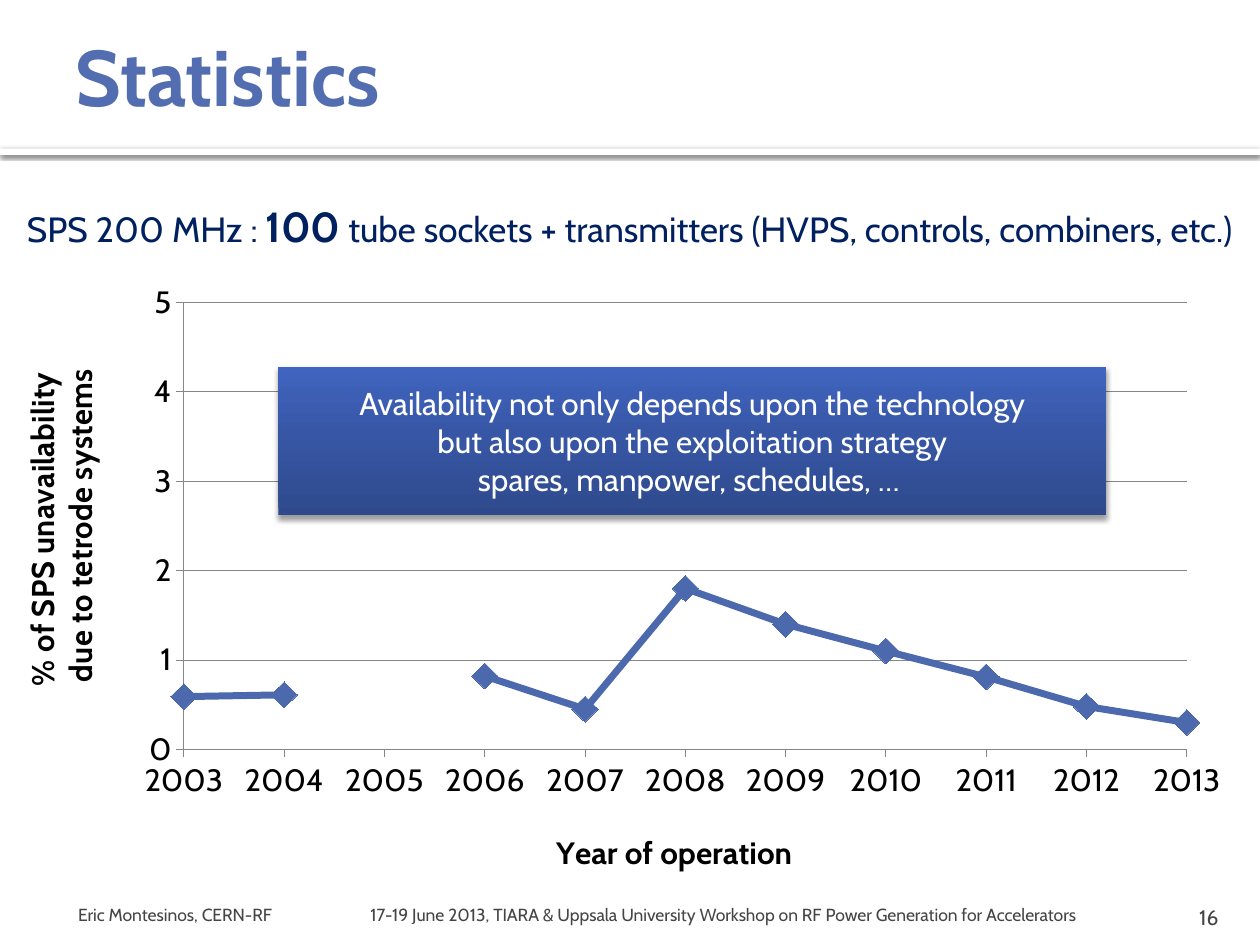
from copy import deepcopy
from dataclasses import dataclass

from lxml import etree
from pptx import Presentation
from pptx.chart.data import XyChartData
from pptx.dml.color import RGBColor
from pptx.enum.chart import XL_CHART_TYPE, XL_MARKER_STYLE, XL_TICK_MARK
from pptx.enum.shapes import MSO_SHAPE
from pptx.enum.text import MSO_ANCHOR, PP_ALIGN
from pptx.oxml.ns import qn
from pptx.util import Inches, Pt

LEFT, CENTER, RIGHT = PP_ALIGN.LEFT, PP_ALIGN.CENTER, PP_ALIGN.RIGHT
TOP, MIDDLE, BOTTOM = MSO_ANCHOR.TOP, MSO_ANCHOR.MIDDLE, MSO_ANCHOR.BOTTOM
RECT = MSO_SHAPE.RECTANGLE
SCATTER_LINES = XL_CHART_TYPE.XY_SCATTER_LINES
DIAMOND = XL_MARKER_STYLE.DIAMOND
TICK_OUT, TICK_NONE = XL_TICK_MARK.OUTSIDE, XL_TICK_MARK.NONE


@dataclass(frozen=True)
class Theme:
    font: str = "Cabin"
    title: str = "526DB0"
    navy: str = "002060"
    series: str = "4D69AE"
    grid: str = "868686"
    footer: str = "454545"
    black: str = "000000"
    white: str = "FFFFFF"
    gradient: tuple = ((0, "2F4A8C"), (0.55, "3756A5"), (1, "4065C0"))
    title_size: int = 45
    accent_size: int = 24
    lead_size: int = 20
    body_size: int = 18
    number_size: int = 12
    footer_size: int = 10


THEME = Theme()
CHART_BOX = (0, 1.39, 10, 5.61)
UNAVAILABILITY = {2002: None, 2003: 0.59, 2004: 0.61, 2005: None, 2006: 0.82, 2007: 0.45,
                  2008: 1.8, 2009: 1.4, 2010: 1.1, 2011: 0.81, 2012: 0.48, 2013: 0.3}


def rgb(color):
    return RGBColor.from_string(color)


def set_attrs(obj, **values):
    for name, value in values.items():
        setattr(obj, name, value)


def style_font(font, size, color, bold=False):
    set_attrs(font, name=THEME.font, size=Pt(size), bold=bold)
    font.color.rgb = rgb(color)


def style_line(line, width, color):
    line.width = Pt(width)
    line.color.rgb = rgb(color)


def fill_text(tf, paragraphs, align):
    """Write paragraphs, each a list of (text, size, color, bold) runs."""
    for i, runs in enumerate(paragraphs):
        p = tf.paragraphs[0] if i == 0 else tf.add_paragraph()
        p.alignment = align
        for text, *style in runs:
            r = p.add_run()
            r.text = text
            style_font(r.font, *style)


def add_text(s, box, runs, align=LEFT, anchor=MIDDLE, wrap=True, insets=(0.1, 0.05, 0.1, 0.05)):
    tf = s.shapes.add_textbox(*map(Inches, box)).text_frame
    left, top, right, bottom = map(Inches, insets)
    set_attrs(tf, word_wrap=wrap, vertical_anchor=anchor, margin_left=left,
              margin_top=top, margin_right=right, margin_bottom=bottom)
    fill_text(tf, [runs], align)


def add_shadow(sp, alpha, blur, dist):
    """Cast a black shadow straight down; alpha in percent, lengths in points."""
    sp.shadow.inherit = False
    effects = sp._element.spPr.find(qn("a:effectLst"))
    shadow = etree.SubElement(effects, qn("a:outerShdw"), blurRad=str(Pt(blur)),
                              dist=str(Pt(dist)), dir="5400000", rotWithShape="0")
    color = etree.SubElement(shadow, qn("a:srgbClr"), val=THEME.black)
    etree.SubElement(color, qn("a:alpha"), val=str(alpha * 1000))


def add_rect(s, box):
    sp = s.shapes.add_shape(RECT, *map(Inches, box))
    sp.line.fill.background()
    return sp


def add_divider(s):
    sp = add_rect(s, (0, 1.18, 10, 0.05))
    sp.fill.solid()
    sp.fill.fore_color.rgb = rgb(THEME.white)
    add_shadow(sp, 60, 2.5, 0.8)


def add_callout(s, box, lines):
    sp = add_rect(s, box)
    sp.fill.gradient()
    sp.fill.gradient_angle = 90
    stops = sp._element.spPr.find(".//" + qn("a:gsLst"))
    stops.append(deepcopy(stops[0]))
    for stop, (position, color) in zip(sp.fill.gradient_stops, THEME.gradient):
        stop.position = position
        stop.color.rgb = rgb(color)
    add_shadow(sp, 38, 3.1, 2)
    set_attrs(sp.text_frame, word_wrap=True, vertical_anchor=MIDDLE)
    fill_text(sp.text_frame, [[(t, THEME.body_size, THEME.white)] for t in lines], CENTER)


def place(parent, index, modes, **inches):
    """Insert a manual layout as the child at index, from lengths within the chart."""
    layout = etree.Element(qn("c:layout"))
    manual = etree.SubElement(layout, qn("c:manualLayout"))
    width, height = CHART_BOX[2:]
    sizes = {"x": width, "y": height, "w": width, "h": height}
    fractions = {name: value / sizes[name] for name, value in inches.items()}
    for name, value in (modes | fractions).items():
        etree.SubElement(manual, qn("c:" + name), val=str(value))
    for old in parent.findall(qn("c:layout")):
        parent.remove(old)
    parent.insert(index, layout)


def style_axis(axis, low, high, title, x, y):
    set_attrs(axis, minimum_scale=low, maximum_scale=high, major_unit=1,
              major_tick_mark=TICK_OUT, minor_tick_mark=TICK_NONE, has_major_gridlines=False)
    set_attrs(axis.tick_labels, number_format="0", number_format_is_linked=False)
    style_line(axis.format.line, 0.5, THEME.grid)
    tf = axis.axis_title.text_frame
    fill_text(tf, [[(t, THEME.body_size, THEME.black, True)] for t in title], CENTER)
    place(axis.axis_title._element, 1, {"xMode": "edge", "yMode": "edge"}, x=x, y=y)
    return tf


def add_unavailability_chart(s):
    data = XyChartData()
    series = data.add_series("Series 1")
    for year, value in UNAVAILABILITY.items():
        series.add_data_point(year, value or 0)
    chart = s.shapes.add_chart(SCATTER_LINES, *map(Inches, CHART_BOX), data).chart
    set_attrs(chart, has_legend=False, has_title=False)
    style_font(chart.font, THEME.body_size, THEME.black)

    style_axis(chart.category_axis, 2003, 2013, ["Year of operation"], 4.37, 5.27)
    tf = style_axis(chart.value_axis, 0, 5,
                    ["% of SPS unavailability", " due to tetrode systems"], 0.14, 1.59)
    chart.value_axis.has_major_gridlines = True
    style_line(chart.value_axis.major_gridlines.format.line, 0.5, THEME.grid)
    body = tf._txBody.find(qn("a:bodyPr"))
    body.set("rot", "-5400000")
    body.set("vert", "horz")

    plot = chart.plots[0]
    plot.vary_by_categories = False
    line = plot.series[0]
    line.smooth = False
    style_line(line.format.line, 4, THEME.series)
    set_attrs(line.marker, style=DIAMOND, size=15)
    line.marker.format.fill.solid()
    line.marker.format.fill.fore_color.rgb = rgb(THEME.series)
    line.marker.format.line.fill.background()

    # A missing value leaves a gap in the line
    points = line._element.findall(".//" + qn("c:yVal") + "//" + qn("c:pt"))
    for point, value in zip(points, UNAVAILABILITY.values()):
        if value is None:
            point.getparent().remove(point)
    place(chart._chartSpace.find(".//" + qn("c:plotArea")), 0,
          {"layoutTarget": "inner", "xMode": "edge", "yMode": "edge"},
          x=1.46, y=1.03, w=7.96, h=3.62)


def add_footer(s):
    small = (THEME.footer_size, THEME.footer)
    add_text(s, (0.5, 7.08, 2.33, 0.3), [("Eric Montesinos, CERN-RF", *small)],
             insets=(0.12, 0.05, 0.05, 0))
    add_text(s, (2.89, 7.08, 6.02, 0.3),
             [("17-19 June 2013, TIARA & Uppsala University Workshop on "
               "RF Power Generation for Accelerators", *small)],
             insets=(0.05, 0.05, 0.05, 0))
    add_text(s, (8.97, 7.08, 0.8, 0.3), [("16", THEME.number_size, THEME.footer)],
             RIGHT, BOTTOM, insets=(0.1, 0.05, 0.1, 0))


def main():
    prs = Presentation()
    set_attrs(prs, slide_width=Inches(10), slide_height=Inches(7.5))
    s = prs.slides.add_slide(prs.slide_layouts[6])
    add_divider(s)
    add_text(s, (0.5, 0.16, 9, 0.87), [("Statistics", THEME.title_size, THEME.title, True)])
    add_unavailability_chart(s)
    add_footer(s)
    add_callout(s, (2.21, 2.91, 6.57, 1.18),
                ["Availability not only depends upon the technology",
                 "but also upon the exploitation strategy",
                 "spares, manpower, schedules, … "])
    lead = (THEME.lead_size, THEME.navy)
    add_text(s, (0, 1.54, 10, 0.35),
             [("SPS 200 MHz : ", *lead), ("100", THEME.accent_size, THEME.navy, True),
              (" tube sockets + transmitters (HVPS, controls, combiners, etc.)", *lead)],
             CENTER, TOP, wrap=False)
    prs.save("out.pptx")


if __name__ == "__main__":
    main()
